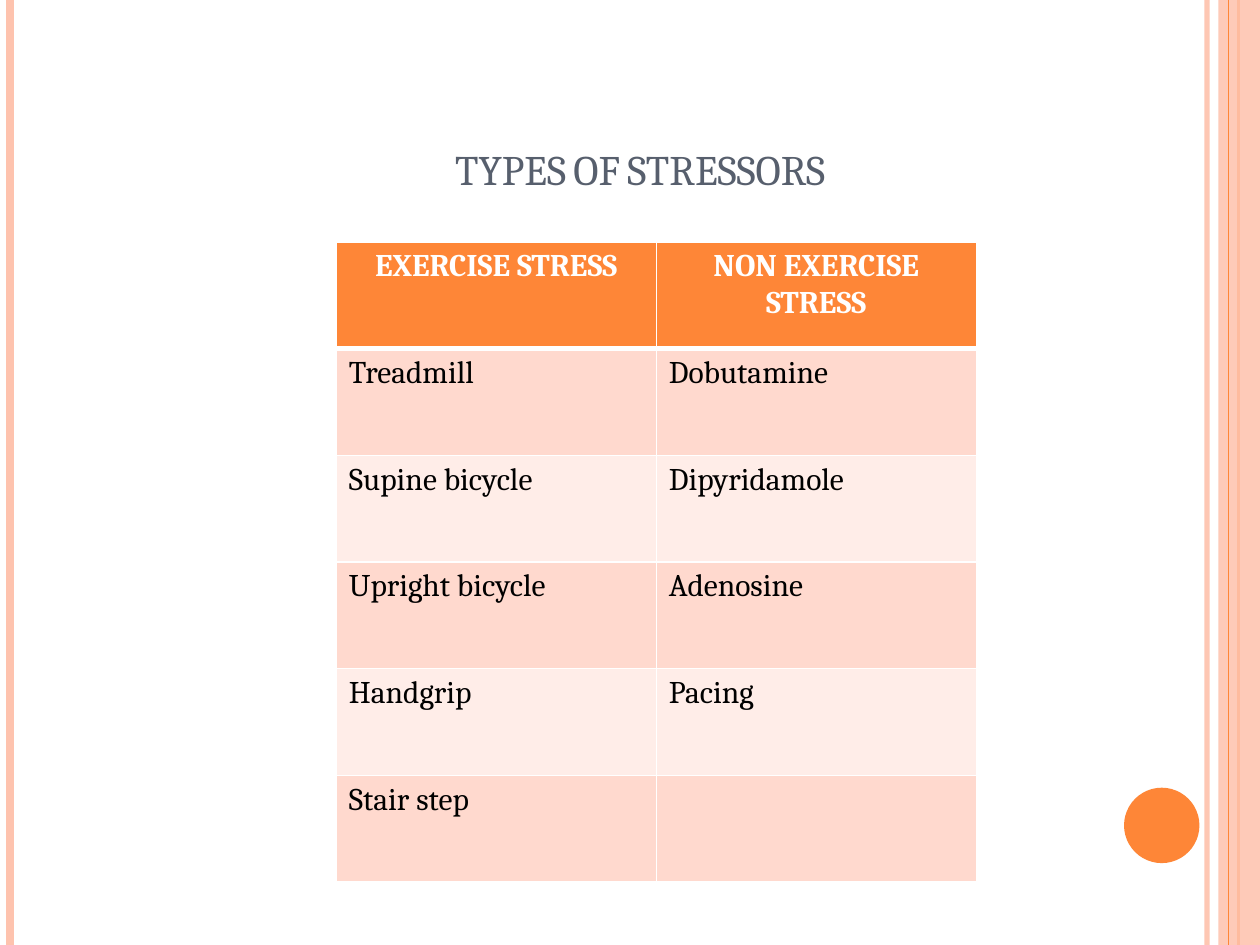
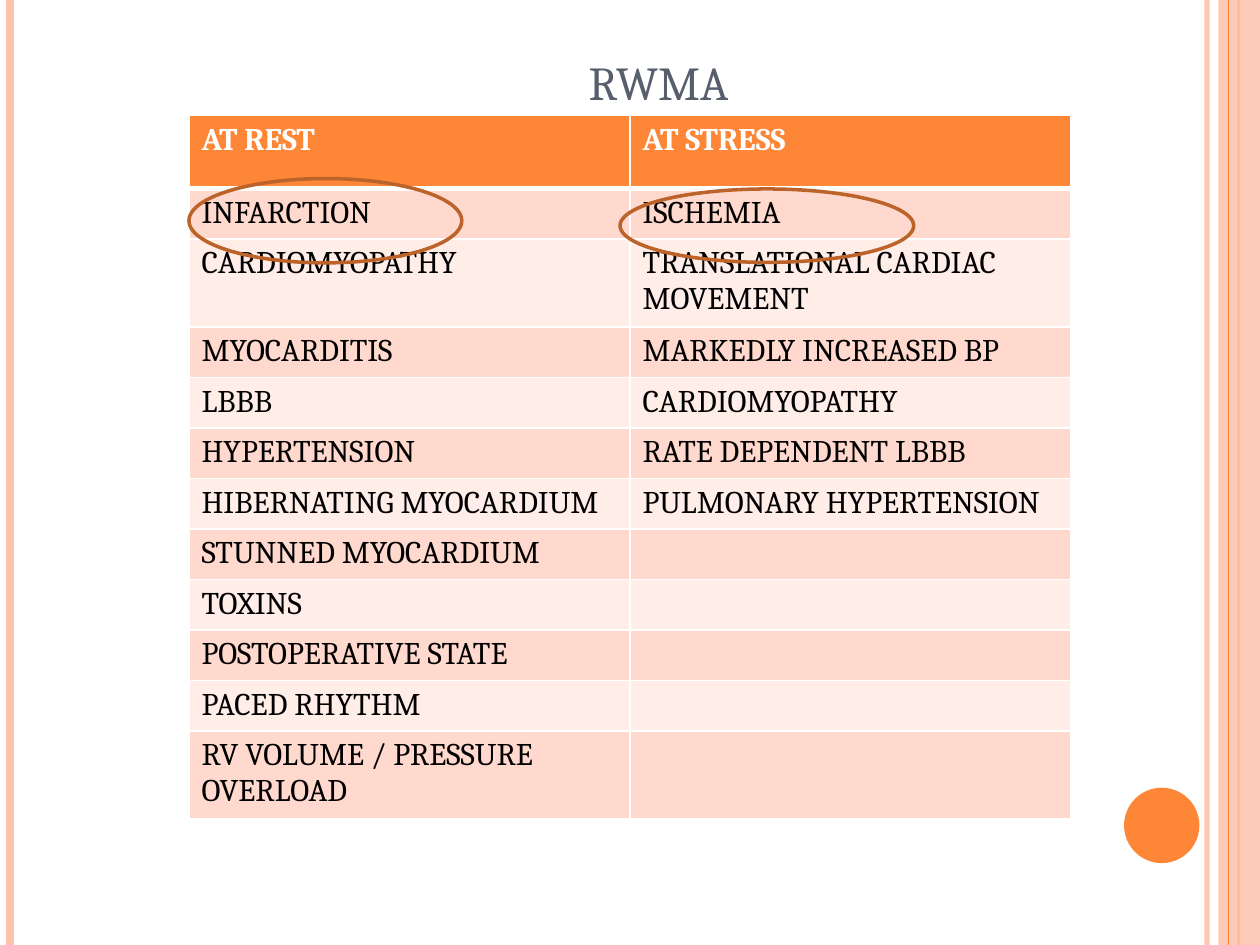
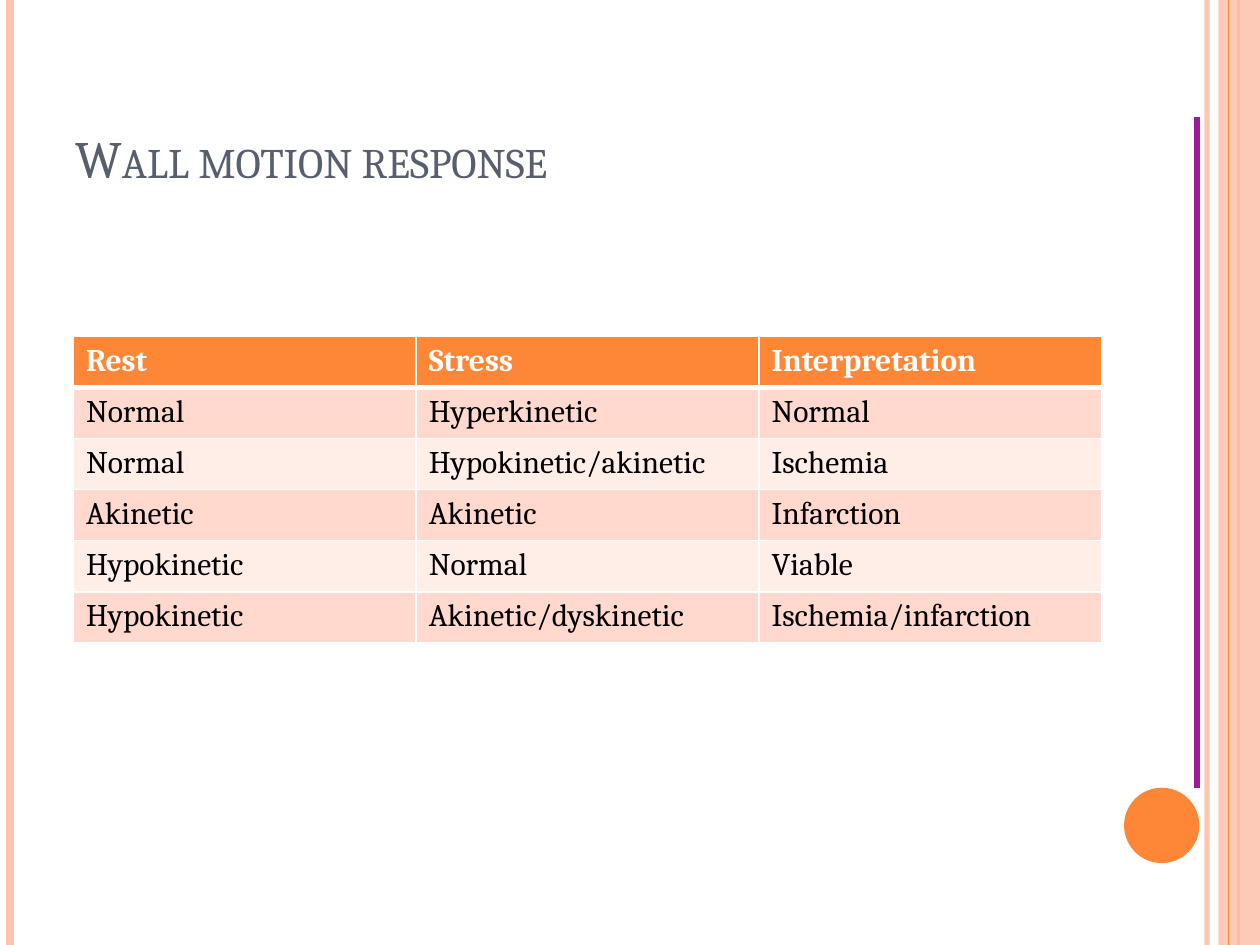
from lxml.etree import SubElement as SubEl
from pptx import Presentation
from pptx.dml.color import RGBColor
from pptx.enum.shapes import MSO_CONNECTOR as Link, MSO_SHAPE as Shape
from pptx.enum.text import MSO_ANCHOR as Anchor, PP_ALIGN as Align
from pptx.oxml import parse_xml
from pptx.oxml.ns import nsdecls, qn
from pptx.util import Cm, Pt

# Shared look
WIDE, HIGH = 25.4, 19.05
FONT = "Cambria"
PEACH = RGBColor(0xFE, 0xC3, 0xAE)
ORANGE = RGBColor(0xFE, 0x86, 0x37)
SLATE = RGBColor(0x57, 0x5F, 0x6D)
ROSE = RGBColor(0xFF, 0xD9, 0xCE)
BLUSH = RGBColor(0xFF, 0xED, 0xE8)
RUST = RGBColor(0xBC, 0x63, 0x29)
PURPLE = RGBColor(0x9E, 0x1A, 0x98)
WHITE = RGBColor(0xFF, 0xFF, 0xFF)
BLACK = RGBColor(0x00, 0x00, 0x00)

# Table content
STRESSORS = [
    ("EXERCISE STRESS", "NON EXERCISE STRESS"),
    ("Treadmill", "Dobutamine"),
    ("Supine bicycle", "Dipyridamole"),
    ("Upright bicycle", "Adenosine"),
    ("Handgrip", "Pacing"),
    ("Stair step", ""),
]
CAUSES = [
    ("AT REST", "AT STRESS"),
    ("INFARCTION", "ISCHEMIA"),
    ("CARDIOMYOPATHY", "TRANSLATIONAL CARDIAC MOVEMENT"),
    ("MYOCARDITIS", "MARKEDLY INCREASED BP"),
    ("LBBB", "CARDIOMYOPATHY"),
    ("HYPERTENSION", "RATE DEPENDENT LBBB"),
    ("HIBERNATING MYOCARDIUM", "PULMONARY HYPERTENSION"),
    ("STUNNED MYOCARDIUM", ""),
    ("TOXINS", ""),
    ("POSTOPERATIVE STATE", ""),
    ("PACED RHYTHM", ""),
    ("RV VOLUME / PRESSURE OVERLOAD", ""),
]
MOTION = [
    ("Rest", "Stress", "Interpretation"),
    ("Normal", "Hyperkinetic", "Normal"),
    ("Normal", "Hypokinetic/akinetic", "Ischemia"),
    ("Akinetic", "Akinetic", "Infarction"),
    ("Hypokinetic", "Normal", "Viable"),
    ("Hypokinetic", "Akinetic/dyskinetic", "Ischemia/infarction"),
]


# Element helpers
def write(frame, text, size=18, color=BLACK, bold=False, align=Align.LEFT, small=False):
    para = frame.paragraphs[0]
    para.alignment = align
    run = para.add_run()
    run.text = text
    font = run.font
    font.name, font.size, font.bold = FONT, Pt(size), bold
    font.color.rgb = color
    if small:
        run._r.get_or_add_rPr().set("cap", "small")


def fade(part, share):
    """Set the opacity, in percent, of the solid fill within a shape or line."""
    tint = next(part.iter(qn("a:srgbClr")))
    SubEl(tint, qn("a:alpha")).set("val", str(share * 1000))


def rule(slide, x, color, width, top=0, end=HIGH, share=100):
    line = slide.shapes.add_connector(Link.STRAIGHT, Cm(x), Cm(top), Cm(x), Cm(end))
    line.line.color.rgb = color
    line.line.width = Pt(width)
    props = line._element.spPr
    if share < 100:
        fade(props, share)
    SubEl(props, qn("a:effectLst"))


def form(slide, kind, box, fill=None, edge=None, share=100):
    shape = slide.shapes.add_shape(kind, *map(Cm, box))
    shape.shadow.inherit = False
    if fill is None:
        shape.fill.background()
    else:
        shape.fill.solid()
        shape.fill.fore_color.rgb = fill
    if share < 100:
        fade(shape._element.spPr, share)
    if edge is None:
        shape.line.fill.background()
    else:
        shape.line.color.rgb = edge
        shape.line.width = Pt(2)


def title(slide, text, box, size, align=Align.CENTER):
    frame = slide.shapes.add_textbox(*map(Cm, box)).text_frame
    frame.word_wrap = True
    frame.vertical_anchor = Anchor.BOTTOM
    write(frame, text, size=size, color=SLATE, align=align, small=True)


def border(cell, top, base):
    props = cell._tc.get_or_add_tcPr()
    sides = (("L", 1), ("R", 1), ("T", top), ("B", base))
    for spot, (side, width) in enumerate(sides):
        props.insert(spot, parse_xml(
            f'<a:ln{side} {nsdecls("a")} w="{Pt(width)}"><a:solidFill>'
            f'<a:srgbClr val="{WHITE}"/></a:solidFill></a:ln{side}>'))


def grid(slide, rows, left, top, col, row, head=None, align=Align.LEFT):
    """Draw a banded table; col, row and head are cell sizes in cm."""
    head = head or row
    count = len(rows[0])
    table = slide.shapes.add_table(
        len(rows), count, Cm(left), Cm(top),
        Cm(col * count), Cm(head + row * (len(rows) - 1))).table
    for part in table.columns:
        part.width = Cm(col)
    for i, texts in enumerate(rows):
        table.rows[i].height = Cm(row if i else head)
        for j, text in enumerate(texts):
            cell = table.cell(i, j)
            cell.fill.solid()
            cell.fill.fore_color.rgb = (ROSE if i % 2 else BLUSH) if i else ORANGE
            border(cell, top=3 if i == 1 else 1, base=1 if i else 3)
            if text and i:
                write(cell.text_frame, text)
            elif text:
                write(cell.text_frame, text, color=WHITE, bold=True, align=align)


def page(deck):
    """Add a blank slide with the shared side bands and disc."""
    slide = deck.slides.add_slide(deck.slide_layouts[6])
    rule(slide, 24.33, PEACH, 3, share=93)
    rule(slide, 0.2, PEACH, 4.5)
    rule(slide, 24.97, ORANGE, 1.5)
    form(slide, Shape.RECTANGLE, (24.56, 0, 0.84, HIGH), fill=PEACH, share=87)
    rule(slide, 24.77, ORANGE, 0.75)
    form(slide, Shape.OVAL, (22.66, 15.88, 1.52, 1.52), fill=ORANGE)
    return slide


def main():
    deck = Presentation()
    deck.slide_width, deck.slide_height = Cm(WIDE), Cm(HIGH)

    # Types of stressors
    slide = page(deck)
    title(slide, "TYPES OF STRESSORS", (2.11, 1.7, 21.59, 2.34), 24)
    grid(slide, STRESSORS, 6.78, 4.88, col=6.45, row=2.15, align=Align.CENTER)

    # Wall motion at rest and at stress
    slide = page(deck)
    title(slide, "RWMA", (1.07, 1.27, 21.59, 1.07), 27)
    grid(slide, CAUSES, 3.81, 2.33, col=8.89, row=0.91, head=1.47)
    for box in ((3.81, 3.6, 5.5, 1.7), (12.5, 3.81, 5.92, 1.48)):
        form(slide, Shape.OVAL, box, edge=RUST)

    # Wall motion response
    slide = page(deck)
    title(slide, "Wall motion response", (1.27, 0.76, 20.75, 3.18), 30, Align.LEFT)
    grid(slide, MOTION, 1.48, 6.78, col=6.91, row=1.03)
    rule(slide, 24.13, PURPLE, 3, top=2.36, end=15.88)

    deck.save("out.pptx")


if __name__ == "__main__":
    main()
